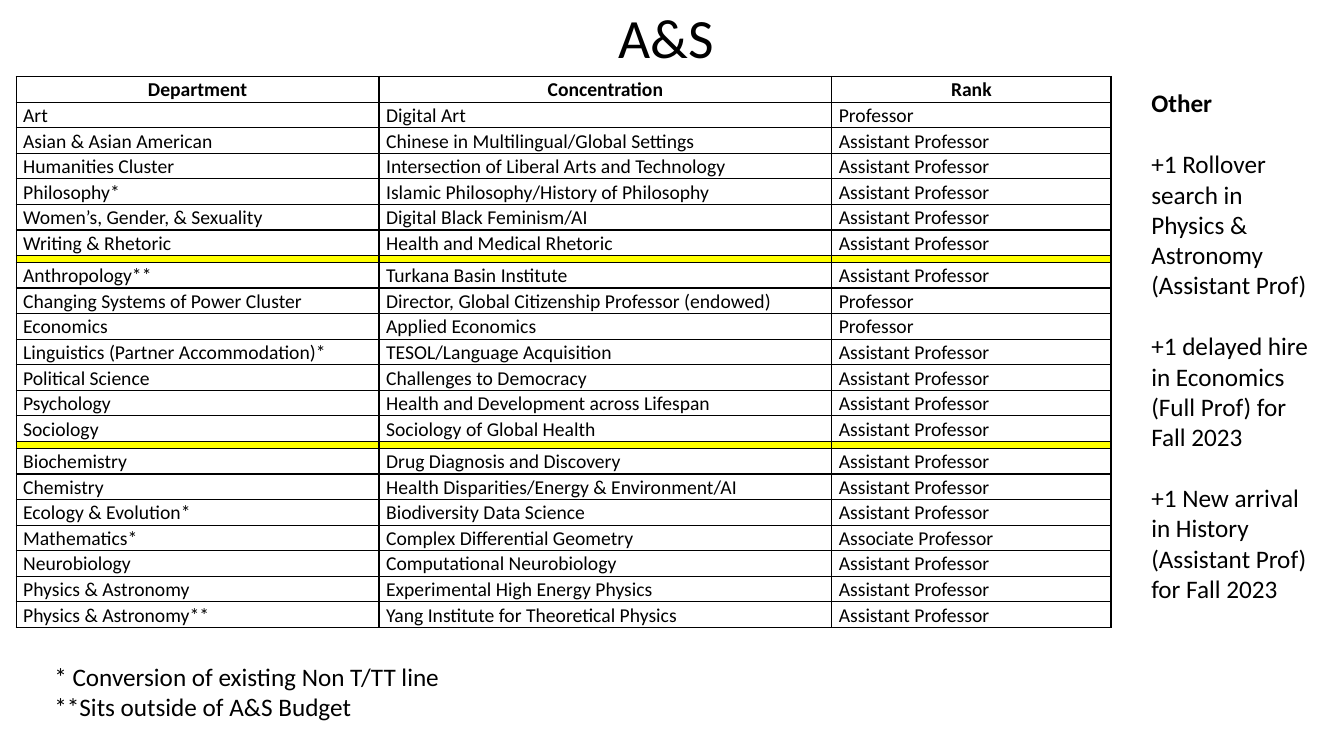
from lxml import etree
from pptx import Presentation
from pptx.dml.color import RGBColor
from pptx.enum.text import MSO_ANCHOR, PP_ALIGN
from pptx.oxml.ns import qn
from pptx.util import Inches, Pt

CENTER, LEFT = PP_ALIGN.CENTER, PP_ALIGN.LEFT
MIDDLE, TOP = MSO_ANCHOR.MIDDLE, MSO_ANCHOR.TOP
COLORS = {"text": "000000", "border": "000000", "divider": "FFFF00"}
FONT = "Calibri"
ASSISTANT = "Assistant Professor"

GROUPS = [
    [
        ("Art", "Digital Art", "Professor"),
        ("Asian & Asian American", "Chinese in Multilingual/Global Settings", ASSISTANT),
        ("Humanities Cluster", "Intersection of Liberal Arts and Technology", ASSISTANT),
        ("Philosophy*", "Islamic Philosophy/History of Philosophy", ASSISTANT),
        ("Women’s, Gender, & Sexuality", "Digital Black Feminism/AI", ASSISTANT),
        ("Writing & Rhetoric", "Health and Medical Rhetoric", ASSISTANT),
    ],
    [
        ("Anthropology**", "Turkana Basin Institute", ASSISTANT),
        ("Changing Systems of Power Cluster", "Director, Global Citizenship Professor (endowed)", "Professor"),
        ("Economics", "Applied Economics", "Professor"),
        ("Linguistics (Partner Accommodation)*", "TESOL/Language Acquisition", ASSISTANT),
        ("Political Science", "Challenges to Democracy", ASSISTANT),
        ("Psychology", "Health and Development across Lifespan", ASSISTANT),
        ("Sociology", "Sociology of Global Health", ASSISTANT),
    ],
    [
        ("Biochemistry", "Drug Diagnosis and Discovery", ASSISTANT),
        ("Chemistry", "Health Disparities/Energy & Environment/AI", ASSISTANT),
        ("Ecology & Evolution*", "Biodiversity Data Science", ASSISTANT),
        ("Mathematics*", "Complex Differential Geometry", "Associate Professor"),
        ("Neurobiology", "Computational Neurobiology", ASSISTANT),
        ("Physics & Astronomy", "Experimental High Energy Physics", ASSISTANT),
        ("Physics & Astronomy**", "Yang Institute for Theoretical Physics", ASSISTANT),
    ],
]


def write(paragraph, text, size=18, bold=False, align=LEFT, spacing=1.0, before=0):
    paragraph.alignment = align
    paragraph.line_spacing = spacing
    paragraph.space_before = Pt(before)
    span = paragraph.add_run()
    span.text = text
    span.font.name = FONT
    span.font.size = Pt(size)
    span.font.bold = bold
    span.font.color.rgb = RGBColor.from_string(COLORS["text"])


def add_borders(cell):
    properties = cell._tc.get_or_add_tcPr()
    for index, side in enumerate(("lnL", "lnR", "lnT", "lnB")):
        line = etree.Element(qn(f"a:{side}"), w=str(Pt(1)))
        fill = etree.SubElement(line, qn("a:solidFill"))
        etree.SubElement(fill, qn("a:srgbClr"), val=COLORS["border"])
        properties.insert(index, line)


deck = Presentation()
deck.slide_width, deck.slide_height = Inches(13.33), Inches(7.5)
page = deck.slides.add_slide(deck.slide_layouts[5])

title = page.shapes.title
title.left, title.top = Inches(0.86), Inches(0.25)
title.width, title.height = Inches(11.5), Inches(0.31)
title.text_frame.vertical_anchor = MIDDLE
write(title.text_frame.paragraphs[0], "A&S", size=39.6, align=CENTER, spacing=0.9)

rows = [("Department", "Concentration", "Rank")]
for number, group in enumerate(GROUPS):
    if number:
        rows.append(None)
    rows.extend(group)

table = page.shapes.add_table(
    len(rows), 3, Inches(0.16), Inches(0.76), Inches(10.86), Inches(5.15)
).table
table.first_row = False
table.horz_banding = False
for column, width in zip(table.columns, (3.6, 4.49, 2.77)):
    column.width = Inches(width)

for row_index, values in enumerate(rows):
    row = table.rows[row_index]
    row.height = Inches(0.23 if values else 0.07)
    header = row_index == 0
    for column_index, cell in enumerate(row.cells):
        cell.margin_left = cell.margin_right = Inches(0.07)
        cell.margin_top = cell.margin_bottom = 0
        paragraph = cell.text_frame.paragraphs[0]
        if values:
            cell.fill.background()
            write(paragraph, values[column_index], size=14, bold=header,
                  align=CENTER if header else LEFT, spacing=1.07)
        else:
            cell.fill.solid()
            cell.fill.fore_color.rgb = RGBColor.from_string(COLORS["divider"])
            etree.SubElement(paragraph._p, qn("a:endParaRPr"), sz="100")
        add_borders(cell)

NOTES = [
    ((11.32, 0.82, 1.85, 5.86), 22, [
        "Other",
        "+1 Rollover search in Physics & Astronomy (Assistant Prof)",
        "+1 delayed hire in Economics (Full Prof) for Fall 2023",
        "+1 New arrival in History (Assistant Prof) for Fall 2023",
    ]),
    ((0.44, 6.51, 10.72, 1.01), 0, [
        "* Conversion of existing Non T/TT line",
        "**Sits outside of A&S Budget",
    ]),
]
for bounds, gap, lines in NOTES:
    box = page.shapes.add_textbox(*map(Inches, bounds))
    frame = box.text_frame
    frame.word_wrap = True
    frame.vertical_anchor = TOP
    for index, text in enumerate(lines):
        paragraph = frame.add_paragraph() if index else frame.paragraphs[0]
        write(paragraph, text, bold=text == "Other", before=gap if index else 0)

deck.save("out.pptx")
